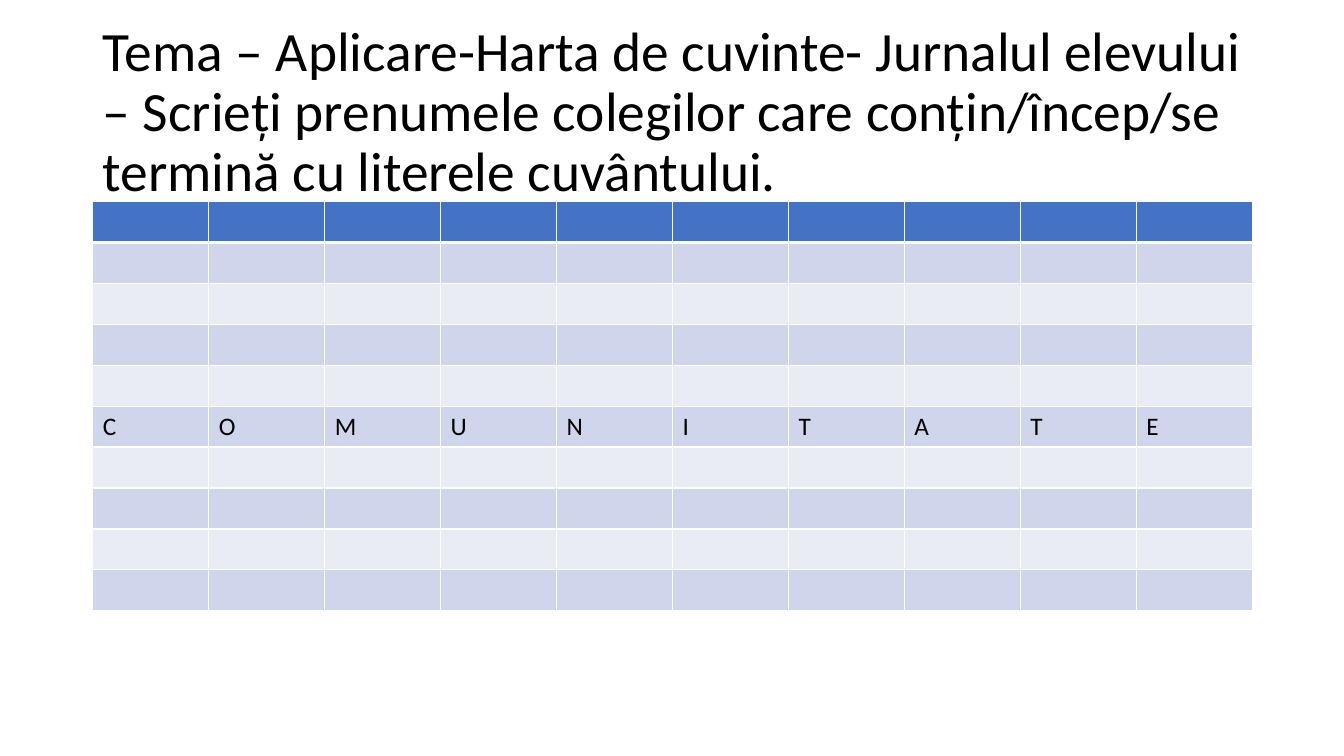
import pptx
import pptx.dml.color
import pptx.enum.text
import pptx.oxml
import pptx.oxml.ns
import pptx.util
from dataclasses import dataclass

Inches = pptx.util.Inches


@dataclass(frozen=True)
class Theme:
    font: str = "Calibri"
    ink: str = "000000"
    header: str = "4472C4"
    bands: tuple = ("CFD5EA", "E9EBF5")
    rule: str = "FFFFFF"
    thin: float = 1
    thick: float = 3
    title_size: float = 39.6
    cell_size: float = 18


def rgb(value):
    return pptx.dml.color.RGBColor.from_string(value)


def apply(target, values):
    for name, value in values.items():
        setattr(target, name, value)


class SlideBuilder:
    def __init__(self, deck, theme):
        self.theme = theme
        self.page = deck.slides.add_slide(deck.slide_layouts[5])

    def style_text(self, para, size):
        apply(para.font, {"name": self.theme.font, "size": pptx.util.Pt(size), "bold": False})
        para.font.color.rgb = rgb(self.theme.ink)

    def title(self, text, left, top, width, height):
        box = self.page.shapes.title
        apply(box, {"left": Inches(left), "top": Inches(top),
                    "width": Inches(width), "height": Inches(height)})
        apply(box.text_frame, {
            "text": text,
            "word_wrap": True,
            "auto_size": pptx.enum.text.MSO_AUTO_SIZE.NONE,
            "vertical_anchor": pptx.enum.text.MSO_ANCHOR.MIDDLE,
        })
        para = box.text_frame.paragraphs[0]
        apply(para, {"alignment": pptx.enum.text.PP_ALIGN.LEFT, "line_spacing": 0.9})
        self.style_text(para, self.theme.title_size)

    def borders(self, cell, widths):
        # Border lines come before the fill in the cell properties
        properties = cell._tc.get_or_add_tcPr()
        for position, (side, width) in enumerate(widths.items()):
            properties.insert(position, pptx.oxml.parse_xml(
                f'<a:{side} {pptx.oxml.ns.nsdecls("a")} w="{pptx.util.Pt(width)}">'
                f'<a:solidFill><a:srgbClr val="{self.theme.rule}"/></a:solidFill></a:{side}>'))

    def word_grid(self, word, row_count, word_row, left, top, width, height):
        theme = self.theme
        table = self.page.shapes.add_table(
            row_count, len(word), Inches(left), Inches(top), Inches(width), Inches(height)).table
        for row_index, row in enumerate(table.rows):
            color = theme.bands[(row_index - 1) % 2] if row_index else theme.header
            widths = {"lnL": theme.thin, "lnR": theme.thin,
                      "lnT": theme.thick if row_index == 1 else theme.thin,
                      "lnB": theme.thick if row_index == 0 else theme.thin}
            for letter, cell in zip(word, row.cells):
                if row_index == word_row:
                    cell.text = letter
                self.style_text(cell.text_frame.paragraphs[0], theme.cell_size)
                cell.fill.solid()
                cell.fill.fore_color.rgb = rgb(color)
                self.borders(cell, widths)


def main():
    deck = pptx.Presentation()
    apply(deck, {"slide_width": Inches(13.33), "slide_height": Inches(7.5)})
    slide = SlideBuilder(deck, Theme())

    # Task heading
    slide.title("Tema – Aplicare-Harta de cuvinte- Jurnalul elevului – Scrieți prenumele "
                "colegilor care conțin/încep/se termină cu literele cuvântului.",
                0.92, 0.4, 11.5, 1.45)

    # Word map: one column per letter
    slide.word_grid("COMUNITATE", 10, 5, 0.92, 2, 11.5, 4.06)

    deck.save("out.pptx")


if __name__ == "__main__":
    main()
